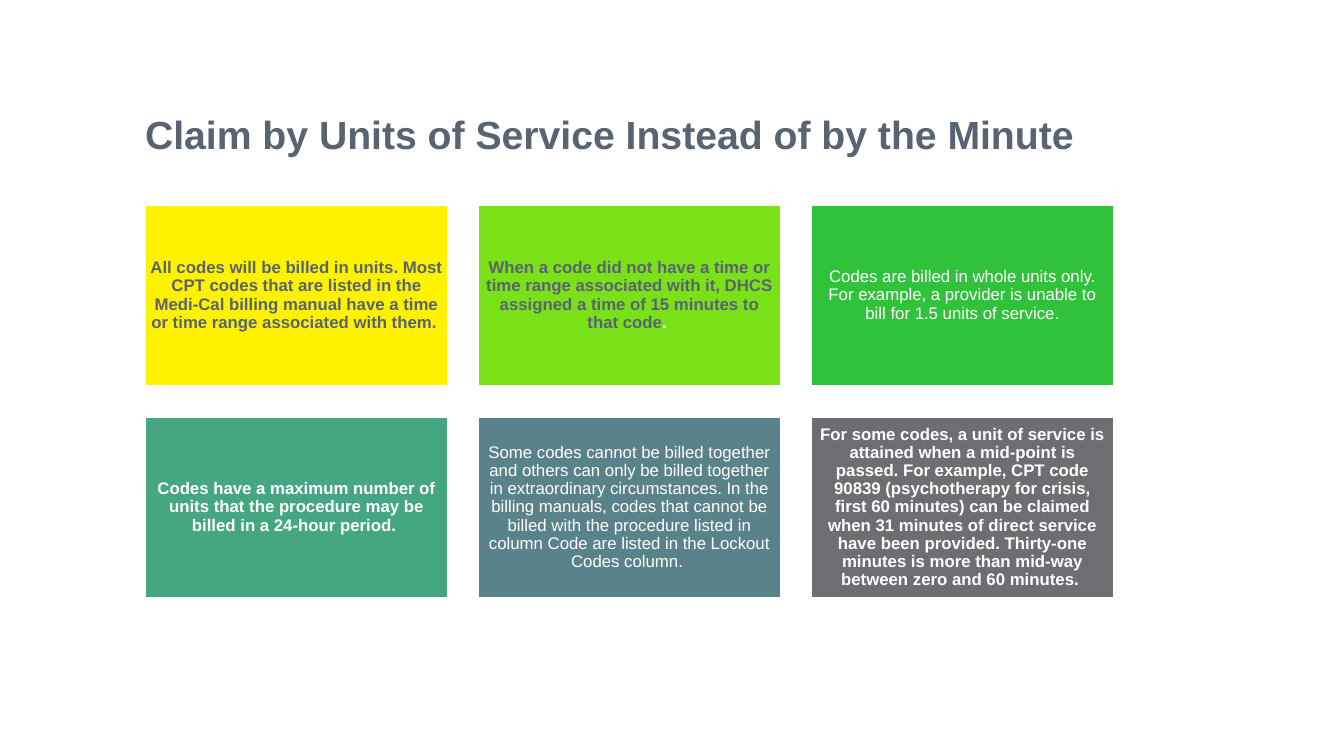
from pptx import Presentation
from pptx.dml.color import RGBColor
from pptx.enum.shapes import MSO_SHAPE as Shape
from pptx.enum.text import MSO_ANCHOR as Anchor, MSO_AUTO_SIZE as Fit, PP_ALIGN as Align
from pptx.util import Pt

SLATE, WHITE = "596473", "FFFFFF"
TITLE = "Claim by Units of Service Instead of by the Minute"
CARDS = [
    ("FFF200", True, [("All codes will be billed in units. Most CPT codes that are listed in the Medi-Cal billing manual have a time or time range associated with them. ", SLATE)]),
    ("7AE018", True, [("When a code did not have a time or time range associated with it, DHCS assigned a time of 15 minutes to that code", SLATE), (". ", WHITE)]),
    ("2FC23A", False, [("Codes are billed in whole units only. For example, a provider is unable to bill for 1.5 units of service.", WHITE)]),
    ("45A682", True, [("Codes have a maximum number of units that the procedure may be billed in a 24-hour period. ", WHITE)]),
    ("5A828B", False, [("Some codes cannot be billed together and others can only be billed together in extraordinary circumstances. In the billing manuals, codes that cannot be billed with the procedure listed in column Code are listed in the Lockout Codes column. ", WHITE)]),
    ("6D6E71", True, [("For some codes, a unit of service is attained when a mid-point is passed. For example, CPT code 90839 (psychotherapy for crisis, first 60 minutes) can be claimed when 31 minutes of direct service have been provided. Thirty-one minutes is more than mid-way between zero and 60 minutes. ", WHITE)]),
]
COLS = 3
LEFT, TOP = 145, 205
WIDE, HIGH = 303, 181
STEP_X, STEP_Y = 333, 212


def px(n):
    return round(n * 914400 / 100.8)


def color(code):
    return RGBColor.from_string(code)


def write(shape, runs, size, bold, align, anchor, inset):
    frame = shape.text_frame
    frame.word_wrap = True
    frame.auto_size = Fit.NONE
    frame.vertical_anchor = anchor
    frame.margin_left = frame.margin_right = px(inset)
    frame.margin_top = frame.margin_bottom = px(inset)
    para = frame.paragraphs[0]
    para.alignment = align
    para.line_spacing = 0.9
    for text, ink in runs:
        run = para.add_run()
        run.text = text
        run.font.name = "Arial"
        run.font.size = Pt(size)
        run.font.bold = bold
        run.font.color.rgb = color(ink)


def main():
    deck = Presentation()
    deck.slide_width, deck.slide_height = px(1344), px(756)
    slide = deck.slides.add_slide(deck.slide_layouts[5])

    title = slide.shapes.title
    title.left, title.top = px(LEFT), px(40)
    title.width, title.height = px(1052), px(118)
    write(title, [(TITLE, SLATE)], 28, True, Align.LEFT, Anchor.BOTTOM, 0)

    for i, (fill, bold, runs) in enumerate(CARDS):
        row, col = divmod(i, COLS)
        card = slide.shapes.add_shape(
            Shape.RECTANGLE, px(LEFT + col * STEP_X), px(TOP + row * STEP_Y), px(WIDE), px(HIGH))
        card.shadow.inherit = False
        card.fill.solid()
        card.fill.fore_color.rgb = color(fill)
        card.line.color.rgb = color(WHITE)
        card.line.width = Pt(1)
        write(card, runs, 12, bold, Align.CENTER, Anchor.MIDDLE, 5)

    deck.save("out.pptx")


if __name__ == "__main__":
    main()
